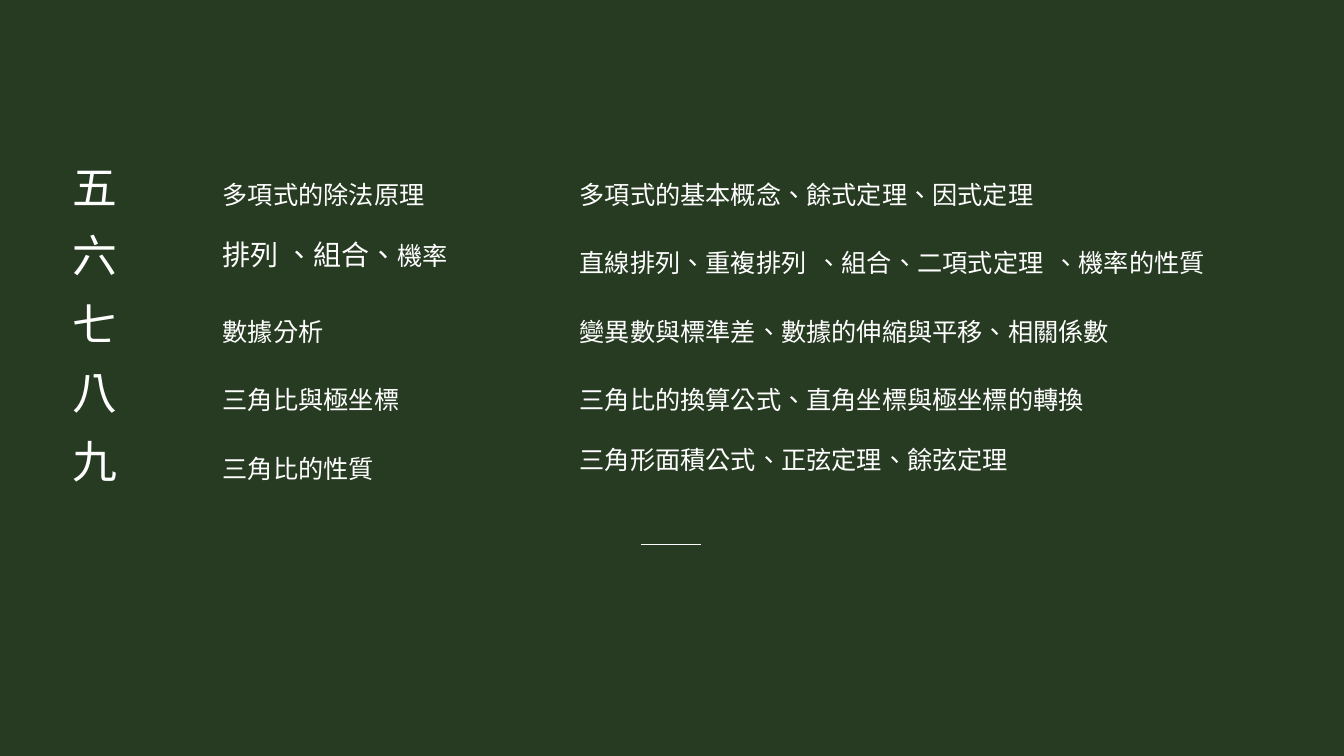
from lxml.etree import SubElement
from pptx import Presentation
from pptx.dml.color import RGBColor
from pptx.enum.shapes import MSO_CONNECTOR as Connector
from pptx.enum.text import MSO_ANCHOR as Anchor
from pptx.oxml.ns import qn
from pptx.util import Inches, Pt

WIDTH, HEIGHT = 13.33, 7.5
COLORS = {"background": "273B22", "text": "FFFFFF"}
LATIN_FONT, CHINESE_FONT = "Arial", "Noto Sans CJK TC"
PLAIN_TABLE_STYLE = "{2D5ABB26-0587-4C30-8999-92F81FD0307C}"

TABLE_LEFT, TABLE_TOP = 0.7, 1.48
COLUMN_WIDTHS = [1.49, 3.54, 7.15]
ROW_HEIGHT = 0.68
NUMBER_SIZE, TOPIC_SIZE, BODY_SIZE = 32, 20, 18

# The large space sets the line height of a cell.
SPACE = (" ", NUMBER_SIZE)


def body(text):
    return (text, BODY_SIZE)


LESSONS = [
    ("五", [body("多項式的除法原理"), SPACE],
     [body("多項式的基本概念、餘式定理、因式定理"), SPACE]),
    ("六", [("排列 、組合、", TOPIC_SIZE), body("機率"), (" ", TOPIC_SIZE)],
     [body("直線排列、重複排列"), SPACE, body("、組合、二項式定理"), SPACE,
      body("、機率的性質"), SPACE]),
    ("七", [body("數據分析"), SPACE],
     [body("變異數與標準差、數據的伸縮與平移、相關係數"), SPACE]),
    ("八", [body("三角比與極坐標"), SPACE],
     [body("三角比的換算公式、直角坐標與極坐標的轉換"), SPACE]),
    ("九", [body("三角比的性質"), SPACE],
     [body("三角形面積公式、正弦定理、餘弦定理")]),
]


def color(name):
    return RGBColor.from_string(COLORS[name])


def add_text(paragraph, text, size=BODY_SIZE, font=LATIN_FONT, fill="text"):
    run = paragraph.add_run()
    run.text = text
    run.font.size = Pt(size)
    run.font.name = font
    run.font.color.rgb = color(fill)
    properties = run.font._element
    properties.set("lang", "zh-TW")
    SubElement(properties, qn("a:ea")).set("typeface", CHINESE_FONT)


def fill_cell(cell, pieces, font):
    cell.fill.background()
    cell.vertical_anchor = Anchor.MIDDLE
    cell.margin_left = cell.margin_right = cell.margin_top = Inches(0.02)
    cell.margin_bottom = 0
    for text, size in pieces:
        add_text(cell.text_frame.paragraphs[0], text, size=size, font=font)


def add_lesson_table(slide):
    frame = slide.shapes.add_table(
        len(LESSONS), len(COLUMN_WIDTHS), Inches(TABLE_LEFT), Inches(TABLE_TOP),
        Inches(sum(COLUMN_WIDTHS)), Inches(ROW_HEIGHT * len(LESSONS)))
    table = frame.table
    table.first_row = table.horz_banding = False
    table._tbl.tblPr.find(qn("a:tableStyleId")).text = PLAIN_TABLE_STYLE
    for column, width in zip(table.columns, COLUMN_WIDTHS):
        column.width = Inches(width)
    for row, (number, topic, contents) in zip(table.rows, LESSONS):
        row.height = Inches(ROW_HEIGHT)
        number_cell, topic_cell, contents_cell = row.cells
        fill_cell(number_cell, [(number, NUMBER_SIZE)], CHINESE_FONT)
        fill_cell(topic_cell, topic, LATIN_FONT)
        fill_cell(contents_cell, contents, LATIN_FONT)


def add_rule(slide, left, right, top):
    rule = slide.shapes.add_connector(
        Connector.STRAIGHT, Inches(left), Inches(top), Inches(right), Inches(top))
    rule.line.color.rgb = color("text")
    rule.line.width = Pt(1)
    SubElement(rule._element.spPr, qn("a:effectLst"))


def main():
    presentation = Presentation()
    presentation.slide_width = Inches(WIDTH)
    presentation.slide_height = Inches(HEIGHT)
    slide = presentation.slides.add_slide(presentation.slide_layouts[6])
    slide.background.fill.solid()
    slide.background.fill.fore_color.rgb = color("background")
    add_rule(slide, left=6.36, right=6.95, top=HEIGHT * 0.72)
    add_lesson_table(slide)
    presentation.save("out.pptx")


if __name__ == "__main__":
    main()
